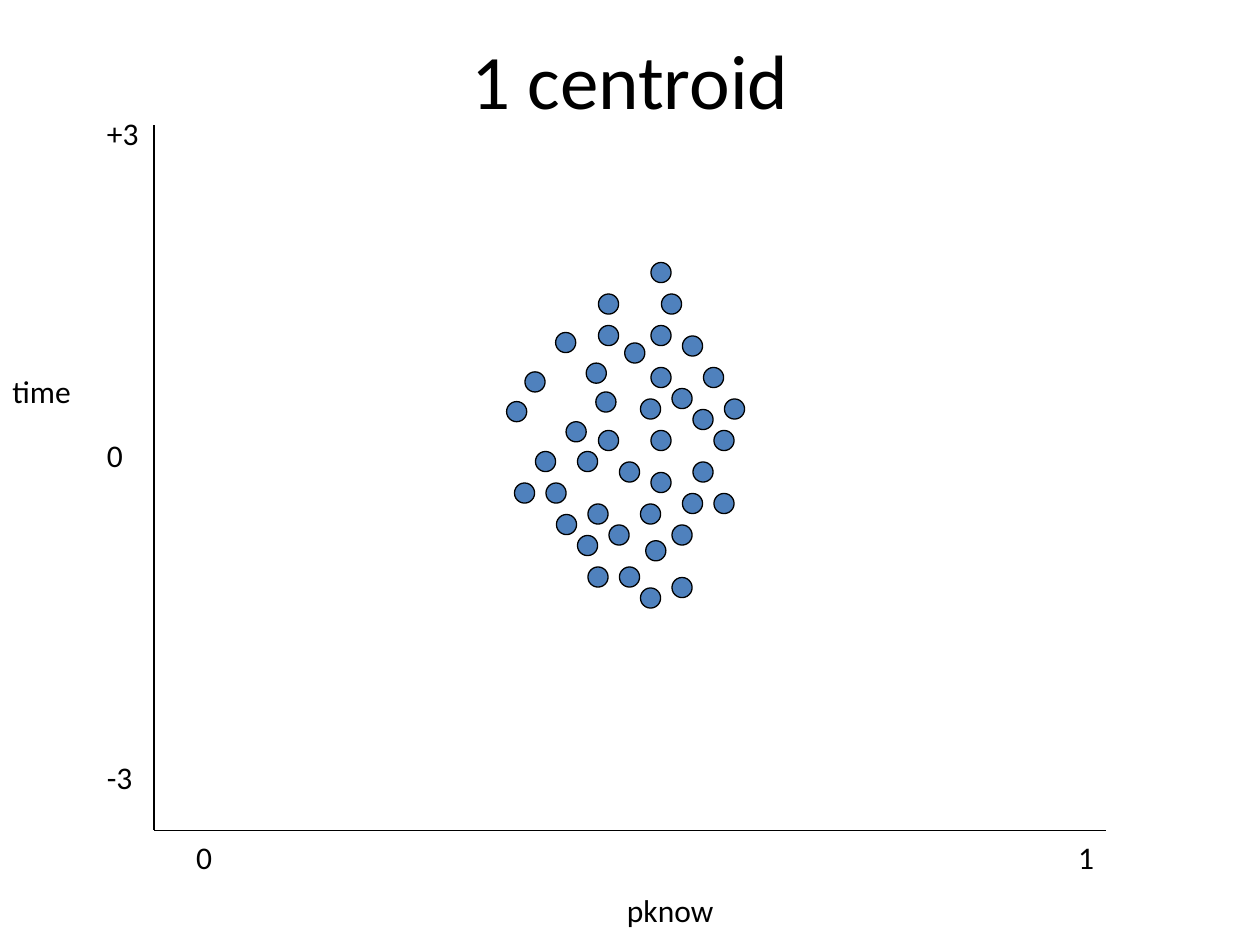
import pptx
import pptx.dml.color
import pptx.enum.shapes
import pptx.enum.text
import pptx.oxml.ns
import pptx.util
from dataclasses import dataclass
from lxml import etree

Pt = pptx.util.Pt
Align = pptx.enum.text.PP_ALIGN


@dataclass(frozen=True)
class Theme:
    font: str = "Calibri"
    ink: str = "000000"
    dot: str = "4F81BD"
    title_size: float = 44
    label_size: float = 18
    line_width: float = 0.75
    dot_size: float = 11.5


@dataclass(frozen=True)
class Box:
    left: float
    top: float
    width: float
    height: float


THEME = Theme()
LABEL_HEIGHT = 29

# Top left corners of the dots, in points from the corner of the cluster
DOTS = [
    (96, 150), (60, 150), (66, 174), (102, 132), (96, 180), (78, 138),
    (24, 126), (42, 108), (18, 108), (90, 18), (54, 18), (102, 42),
    (114, 60), (66, 114), (84, 0), (108, 84), (84, 96), (120, 96),
    (108, 114), (54, 96), (48, 174), (78, 186), (6, 126), (30, 144),
    (81, 159), (42, 156), (47, 57.5), (29.5, 40), (1.5, 79.5), (12, 62.5),
    (35.5, 91), (69, 46), (126, 78), (78, 78), (120, 132), (84, 120),
    (96, 72), (54, 36), (84, 36), (52.5, 74), (84, 60), (48, 138),
]


def rgb(value):
    return pptx.dml.color.RGBColor.from_string(value)


def add_text(slide, box, text, size, align=Align.LEFT):
    shape = slide.shapes.add_textbox(Pt(box.left), Pt(box.top), Pt(box.width), Pt(box.height))
    frame = shape.text_frame
    frame.word_wrap = True
    frame.vertical_anchor = pptx.enum.text.MSO_ANCHOR.MIDDLE
    paragraph = frame.paragraphs[0]
    paragraph.alignment = align
    run = paragraph.add_run()
    run.text = text
    run.font.name = THEME.font
    run.font.size = Pt(size)
    run.font.color.rgb = rgb(THEME.ink)


def add_label(slide, left, middle, width, text, align=Align.LEFT):
    box = Box(left, middle - LABEL_HEIGHT / 2, width, LABEL_HEIGHT)
    add_text(slide, box, text, THEME.label_size, align)


def add_line(slide, x1, y1, x2, y2):
    line = slide.shapes.add_connector(
        pptx.enum.shapes.MSO_CONNECTOR.STRAIGHT, Pt(x1), Pt(y1), Pt(x2), Pt(y2))
    line.line.color.rgb = rgb(THEME.ink)
    line.line.width = Pt(THEME.line_width)
    properties = line._element.spPr
    etree.SubElement(properties, pptx.oxml.ns.qn("a:effectLst"))


def add_axes(slide, box):
    bottom = box.top + box.height
    add_line(slide, box.left, box.top, box.left, bottom)
    add_line(slide, box.left, bottom, box.left + box.width, bottom)

    # Vertical axis: evenly spaced ticks and name
    for index, text in enumerate(["+3", "0", "-3"]):
        add_label(slide, box.left - 34, box.top + 4.5 + index * 184, 45, text)
    add_label(slide, 0, box.top + 152, 60, "time")

    # Horizontal axis: ticks at both ends and name
    for offset, text in [(17, "0"), (521, "1")]:
        add_label(slide, box.left + offset, bottom + 15, 45, text)
    add_label(slide, box.left + 17, bottom + 45.5, 556, "pknow", Align.CENTER)


def add_cluster(slide, box):
    for x, y in DOTS:
        dot = slide.shapes.add_shape(
            pptx.enum.shapes.MSO_SHAPE.OVAL, Pt(box.left + x), Pt(box.top + y),
            Pt(THEME.dot_size), Pt(THEME.dot_size))
        dot.shadow.inherit = False
        dot.fill.solid()
        dot.fill.fore_color.rgb = rgb(THEME.dot)
        dot.line.color.rgb = rgb(THEME.ink)
        dot.line.width = Pt(THEME.line_width)


def main():
    presentation = pptx.Presentation()
    presentation.slide_width, presentation.slide_height = Pt(720), Pt(540)
    slide = presentation.slides.add_slide(presentation.slide_layouts[6])

    add_axes(slide, Box(88, 71.5, 544, 403))
    add_cluster(slide, Box(288, 150, 137.5, 197.5))
    add_text(slide, Box(36, 0, 648, 90), "1 centroid", THEME.title_size, Align.CENTER)

    presentation.save("out.pptx")


if __name__ == "__main__":
    main()
